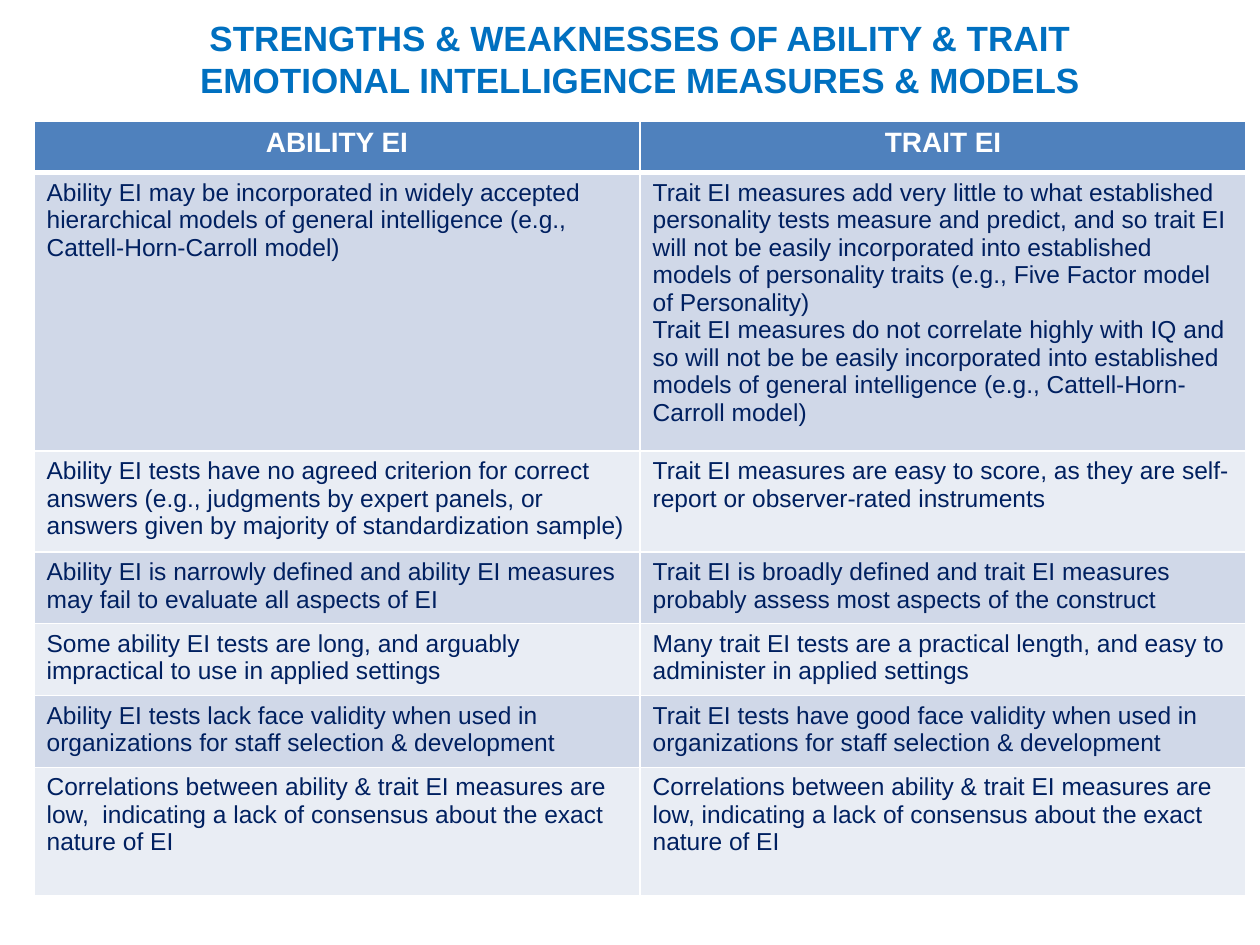
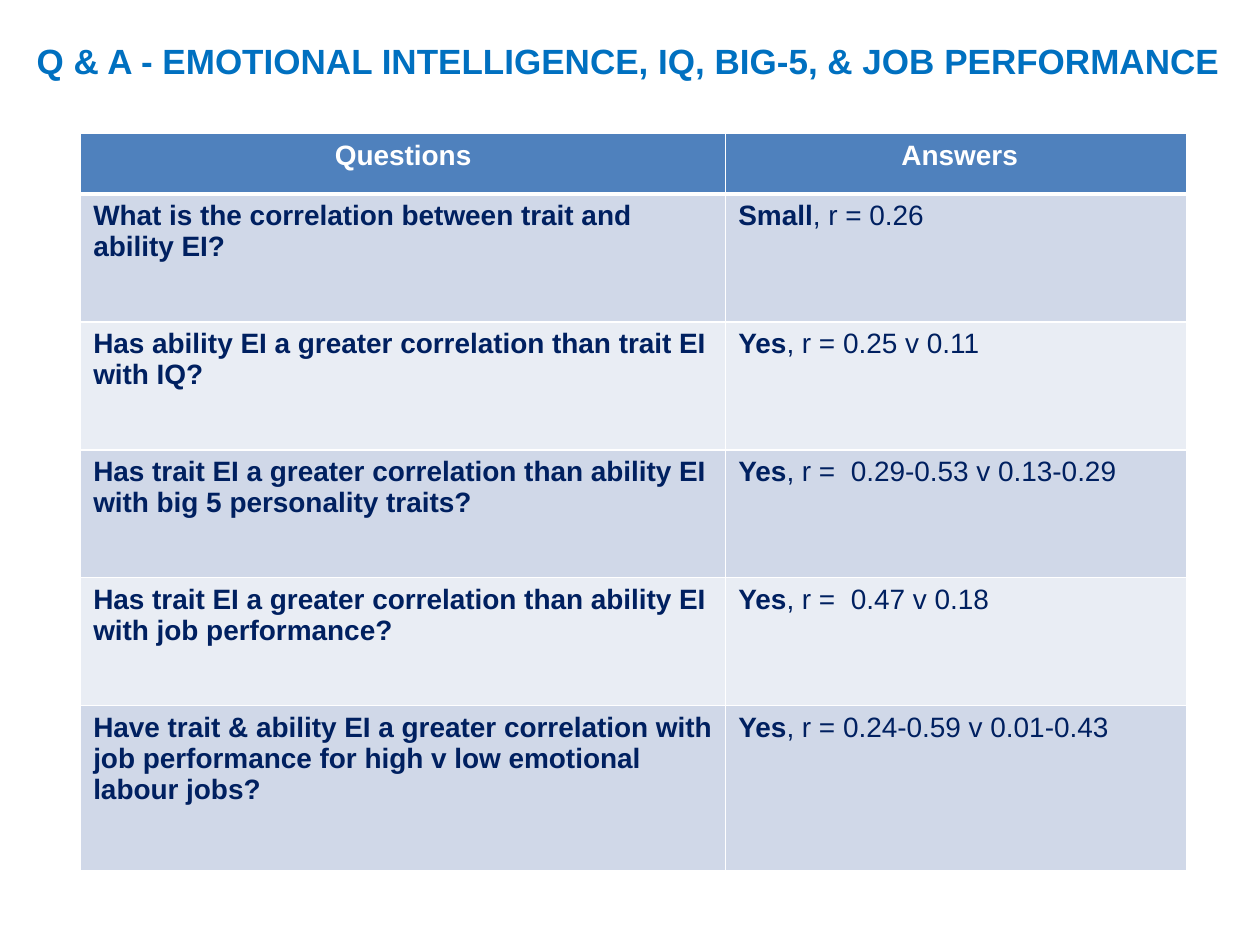
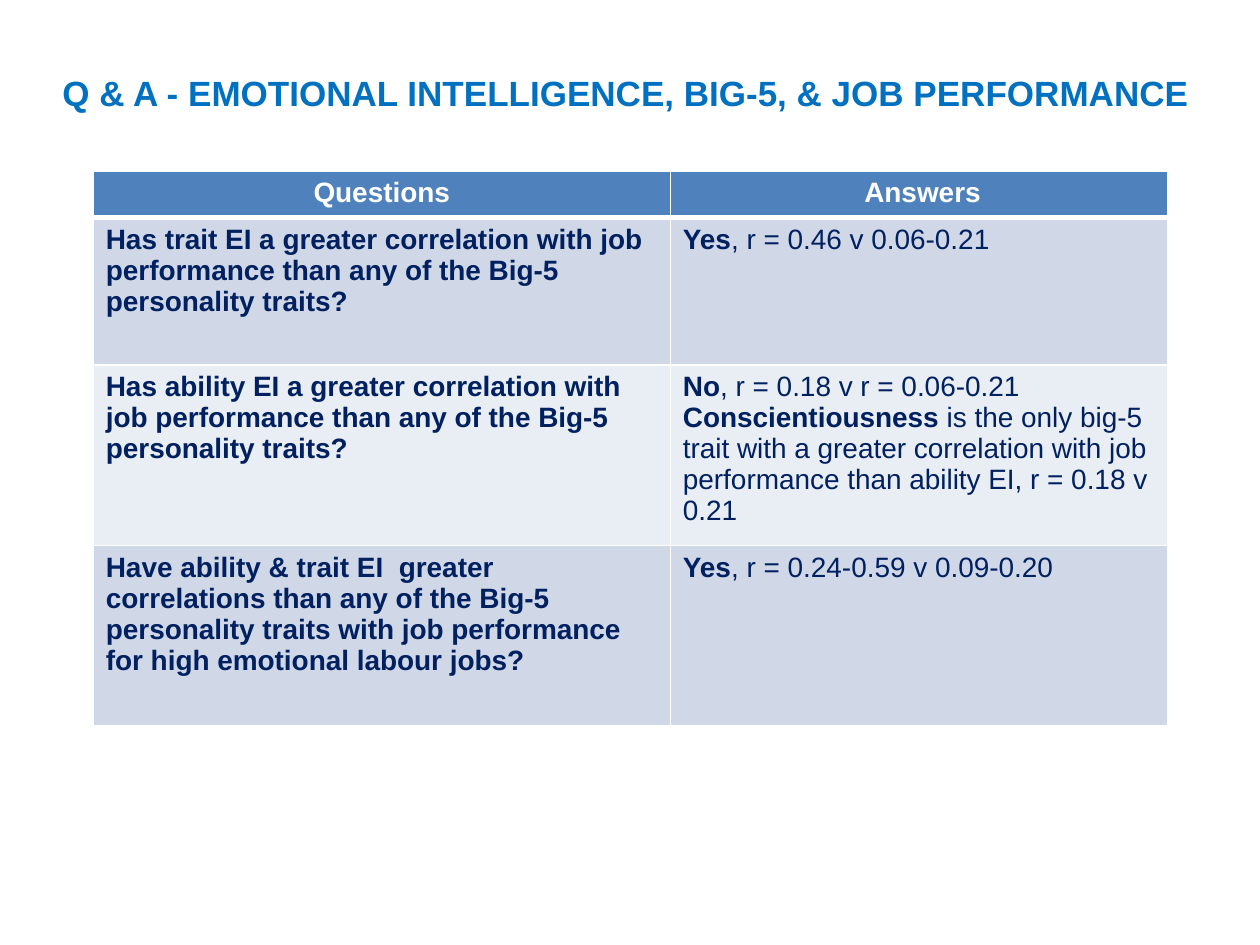
from lxml.etree import SubElement
from pptx import Presentation
from pptx.dml.color import RGBColor
from pptx.enum.text import MSO_ANCHOR, MSO_AUTO_SIZE, PP_ALIGN
from pptx.oxml.ns import qn
from pptx.util import Inches, Pt

COLORS = {
    "title": "0070C0",
    "header": "4F81BD",
    "dark_band": "D0D8E8",
    "light_band": "E9EDF4",
    "text": "002060",
    "white": "FFFFFF",
}
FONT = "Arial"
TITLE_ONLY_LAYOUT = 5
GRID_COLUMNS, GRID_ROWS = 100, 75

MEASURES = [
    ("ABILITY EI", "TRAIT EI"),
    (
        "Ability EI may be incorporated in widely accepted hierarchical models of general intelligence (e.g., Cattell-Horn-Carroll model)",
        [
            "Trait EI measures add very little to what established personality tests measure and predict, and so trait EI will not be easily incorporated into established models of personality traits (e.g., Five Factor model of Personality)",
            "Trait EI measures do not correlate highly with IQ and so will not be be easily incorporated into established models of general intelligence (e.g., Cattell-Horn-Carroll model)",
        ],
    ),
    (
        "Ability EI tests have no agreed criterion for correct answers (e.g., judgments by expert panels, or answers given by majority of standardization sample)",
        "Trait EI measures are easy to score, as they are self-report or observer-rated instruments",
    ),
    (
        "Ability EI is narrowly defined and ability EI measures may fail to evaluate all aspects of EI",
        "Trait EI is broadly defined and trait EI measures probably assess most aspects of the construct",
    ),
    (
        "Some ability EI tests are long, and arguably impractical to use in applied settings",
        "Many trait EI tests are a practical length, and easy to administer in applied settings",
    ),
    (
        "Ability EI tests lack face validity when used in organizations for staff selection & development",
        "Trait EI tests have good face validity when used in organizations for staff selection & development",
    ),
    (
        "Correlations between ability & trait EI measures are low,  indicating a lack of consensus about the exact nature of EI",
        "Correlations between ability & trait EI measures are low, indicating a lack of consensus about the exact nature of EI",
    ),
]
QUESTION_HEADER = ("Questions", " Answers")
IQ_QUESTIONS = [
    QUESTION_HEADER,
    ("What is the correlation between trait and ability EI?", [("Small", ", r = 0.26")]),
    ("Has ability EI a greater correlation than trait EI with IQ?", [("Yes", ", r = 0.25 v 0.11")]),
    (
        "Has trait EI a greater correlation than ability EI with big 5 personality traits?",
        [("Yes", ", r =  0.29-0.53 v 0.13-0.29")],
    ),
    (
        "Has trait EI a greater correlation than ability EI with job performance?",
        [("Yes", ", r =  0.47 v 0.18")],
    ),
    (
        "Have trait & ability EI a greater correlation with job performance for high v low emotional labour jobs?",
        [("Yes", ", r = 0.24-0.59 v 0.01-0.43")],
    ),
]
BIG_FIVE_QUESTIONS = [
    QUESTION_HEADER,
    (
        "Has trait EI a greater correlation with job performance than any of the Big-5 personality traits?",
        [("Yes", ", r = 0.46 v 0.06-0.21")],
    ),
    (
        "Has ability EI a greater correlation with job performance than any of the Big-5 personality traits?",
        [
            ("No", ", r = 0.18 v r = 0.06-0.21"),
            (
                "Conscientiousness",
                " is the only big-5 trait with a greater correlation with job performance than ability EI, r = 0.18 v 0.21",
            ),
        ],
    ),
    (
        "Have ability & trait EI  greater correlations than any of the Big-5 personality traits with job performance for high emotional labour jobs?",
        [("Yes", ", r = 0.24-0.59 v 0.09-0.20")],
    ),
]


class Deck:
    def __init__(self):
        self.presentation = Presentation()
        self.presentation.slide_width = Inches(10)
        self.presentation.slide_height = Inches(7.5)
        self.slide = None

    def across(self, columns):
        return round(self.presentation.slide_width * columns / GRID_COLUMNS)

    def down(self, rows):
        return round(self.presentation.slide_height * rows / GRID_ROWS)

    def add_slide(self):
        layout = self.presentation.slide_layouts[TITLE_ONLY_LAYOUT]
        self.slide = self.presentation.slides.add_slide(layout)

    def style(self, paragraph, size, color, bold):
        paragraph.font.name = FONT
        paragraph.font.size = Pt(size)
        paragraph.font.color.rgb = RGBColor.from_string(COLORS[color])
        if bold is not None:
            paragraph.font.bold = bold

    def title(self, text, left, top, width, height):
        title = self.slide.shapes.title
        title.left, title.top = self.across(left), self.down(top)
        title.width, title.height = self.across(width), self.down(height)
        frame = title.text_frame
        frame.word_wrap = True
        frame.auto_size = MSO_AUTO_SIZE.SHAPE_TO_FIT_TEXT
        frame.vertical_anchor = MSO_ANCHOR.TOP
        paragraph = frame.paragraphs[0]
        paragraph.text = text
        paragraph.alignment = PP_ALIGN.CENTER
        self.style(paragraph, 20, "title", True)

    def border(self, cell, row):
        properties = cell._tc.get_or_add_tcPr()
        widths = {
            "a:lnL": 1,
            "a:lnR": 1,
            "a:lnT": 3 if row == 1 else 1,
            "a:lnB": 3 if row == 0 else 1,
        }
        for side, width in widths.items():
            line = SubElement(properties, qn(side), w=str(Pt(width)))
            fill = SubElement(line, qn("a:solidFill"))
            SubElement(fill, qn("a:srgbClr"), val=COLORS["white"])

    def fill_cell(self, cell, content, row, size, bold):
        header = row == 0
        self.border(cell, row)
        cell.fill.solid()
        band = "header" if header else ("light_band", "dark_band")[row % 2]
        cell.fill.fore_color.rgb = RGBColor.from_string(COLORS[band])
        items = content if isinstance(content, list) else [content]
        for index, item in enumerate(items):
            frame = cell.text_frame
            paragraph = frame.add_paragraph() if index else frame.paragraphs[0]
            mixed = isinstance(item, tuple)
            color = "white" if header else "text"
            self.style(paragraph, 16 if header else size, color, None if mixed else header or bold)
            if header:
                paragraph.alignment = PP_ALIGN.CENTER
            for part, text in enumerate(item if mixed else (item,)):
                run = paragraph.add_run()
                run.text = text
                if mixed:
                    run.font.bold = part == 0

    def table(self, records, left, top, widths, heights, size, bold):
        table = self.slide.shapes.add_table(
            len(records), len(widths), self.across(left), self.down(top),
            self.across(sum(widths)), self.down(sum(heights)),
        ).table
        table.horz_banding = False
        for column, width in zip(table.columns, widths):
            column.width = self.across(width)
        for row, (record, height) in enumerate(zip(records, heights)):
            table.rows[row].height = self.down(height)
            for column, content in enumerate(record):
                self.fill_cell(table.cell(row, column), content, row, size, bold)


def main():
    deck = Deck()

    deck.add_slide()
    deck.title(
        "STRENGTHS & WEAKNESSES OF ABILITY & TRAIT EMOTIONAL INTELLIGENCE MEASURES & MODELS",
        12.1, 0.8, 77.4, 7.7,
    )
    deck.table(MEASURES, 2.7, 9.6, [48.1, 48.1], [4.1, 22.1, 8, *[5.7] * 3, 10.2], 14, False)

    deck.add_slide()
    deck.title("Q & A - EMOTIONAL INTELLIGENCE, IQ, BIG-5, & JOB PERFORMANCE ", 1.5, 2.6, 97.5, 4.4)
    deck.table(IQ_QUESTIONS, 6.4, 10.6, [51.2, 36.6], [4.8, *[10.15] * 4, 13.1], 16, True)

    deck.add_slide()
    deck.title("Q & A - EMOTIONAL INTELLIGENCE, BIG-5, & JOB PERFORMANCE ", 1.1, 5.2, 97.9, 4.4)
    deck.table(BIG_FIVE_QUESTIONS, 7.4, 13.6, [45.8, 39.5], [3.6, 11.7, 14.3, 14.3], 16, True)

    deck.presentation.save("out.pptx")


if __name__ == "__main__":
    main()
